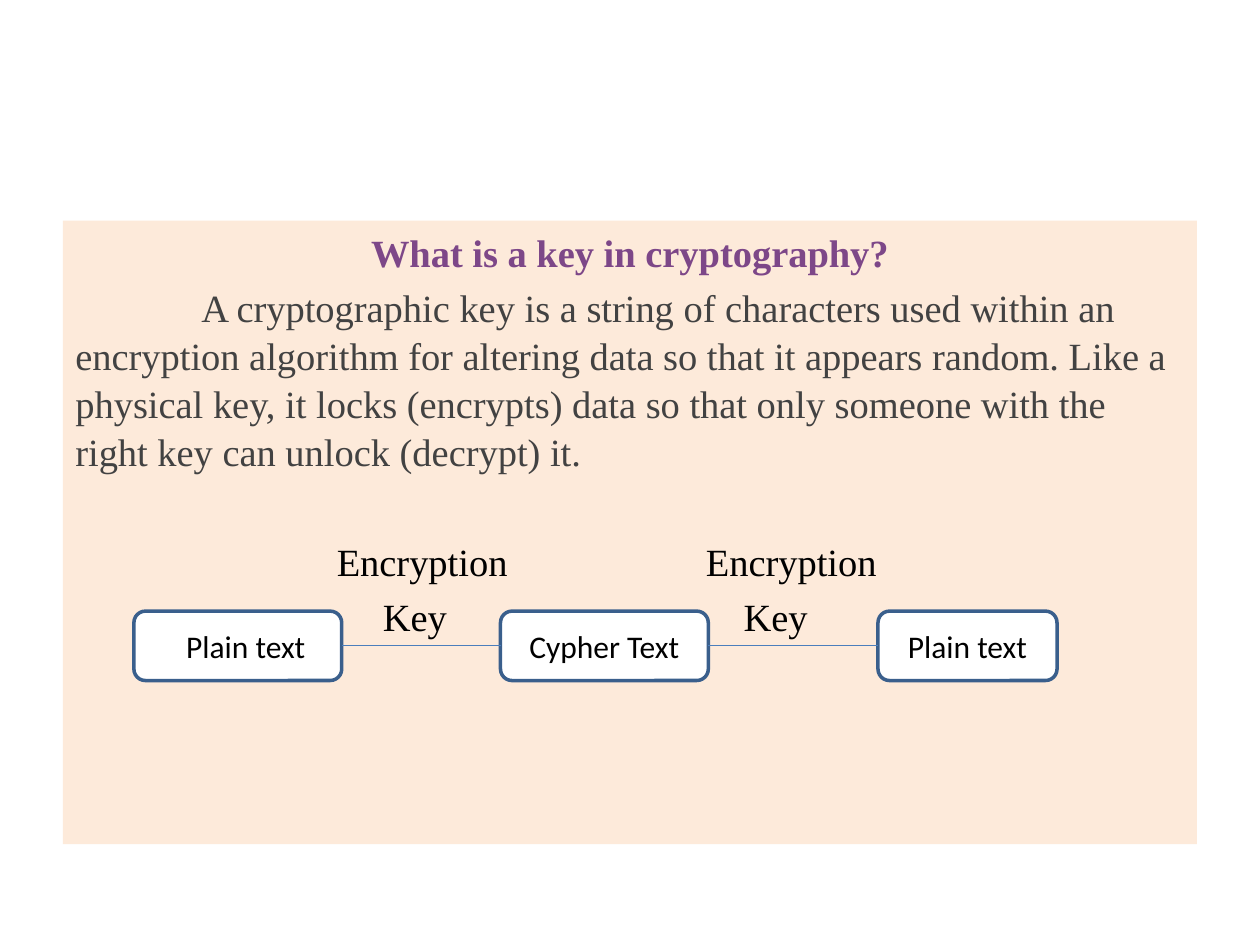
from lxml.etree import SubElement
from pptx import Presentation
from pptx.dml.color import RGBColor
from pptx.enum.shapes import MSO_CONNECTOR, MSO_SHAPE
from pptx.enum.text import MSO_ANCHOR, PP_ALIGN
from pptx.oxml.ns import qn
from pptx.util import Cm, Pt

DEFINITION = (
    "A cryptographic key is a string of characters used within an encryption "
    "algorithm for altering data so that it appears random. Like a physical key, "
    "it locks (encrypts) data so that only someone with the right key can unlock "
    "(decrypt) it."
)
# Text, left, width and extra left inset of each step, in cm
STEPS = [
    ("Plain text", 1.43, 4.19, 0.32),
    ("Cypher Text", 8.82, 4.19, 0),
    ("Plain text", 16.43, 3.61, 0),
]


def rgb(value):
    return RGBColor.from_string(value)


def style_font(font, name, size, color, bold=False):
    font.name, font.size, font.bold = name, Pt(size), bold
    font.color.rgb = rgb(color)


def add_box(slide, kind, left, top, width, height, fill):
    sp = slide.shapes.add_shape(kind, Cm(left), Cm(top), Cm(width), Cm(height))
    sp.shadow.inherit = False
    sp.fill.solid()
    sp.fill.fore_color.rgb = rgb(fill)
    sp.text_frame.word_wrap = True
    return sp


def set_tabs(p, stops):
    """Give the paragraph left tab stops, in cm from the text edge."""
    tabs = SubElement(p._p.get_or_add_pPr(), qn("a:tabLst"))
    for stop in stops:
        SubElement(tabs, qn("a:tab"), pos=str(Cm(stop)), algn="l")


def add_panel(slide, left, top, width, height):
    sp = add_box(slide, MSO_SHAPE.RECTANGLE, left, top, width, height, "FDEADA")
    sp.line.fill.background()
    tf = sp.text_frame
    tf.vertical_anchor = MSO_ANCHOR.TOP
    # Text, colour, bold, space before in points, tab stops
    rows = [
        ("What is a key in cryptography?", "7D4788", True, 0, ()),
        (DEFINITION, "424242", False, 4.4, ()),
        ("\tEncryption\tEncryption", "000000", False, 35, (5.27, 12.71)),
        ("\tKey\tKey", "000000", False, 4.4, (6.2, 13.47)),
    ]
    for i, (text, color, bold, before, stops) in enumerate(rows):
        p = tf.add_paragraph() if i else tf.paragraphs[0]
        p.text = text
        p.alignment = PP_ALIGN.LEFT if i else PP_ALIGN.CENTER
        p.space_before = Pt(before)
        p.line_spacing = 1.04
        if stops:
            set_tabs(p, stops)
        style_font(p.font, "Times New Roman", 22, color, bold)
    tf.paragraphs[1]._p.get_or_add_pPr().set("indent", str(Cm(2.54)))


def add_step(slide, left, top, width, height, text, inset):
    sp = add_box(slide, MSO_SHAPE.ROUNDED_RECTANGLE, left, top, width, height, "FFFFFF")
    sp.line.color.rgb = rgb("3A5F8C")
    sp.line.width = Pt(2)
    tf = sp.text_frame
    tf.margin_left += Cm(inset)
    tf.vertical_anchor = MSO_ANCHOR.MIDDLE
    p = tf.paragraphs[0]
    p.text = text
    p.alignment = PP_ALIGN.CENTER
    style_font(p.font, "Calibri", 18, "000000")
    return sp


def join(slide, start, end):
    line = slide.shapes.add_connector(MSO_CONNECTOR.STRAIGHT, 0, 0, 0, 0)
    line.begin_connect(start, 3)
    line.end_connect(end, 1)
    line.line.color.rgb = rgb("4B7EBC")
    line.line.width = Pt(0.75)
    SubElement(line._element.spPr, qn("a:effectLst"))


def add_flow(slide, left, top, height):
    steps = [
        add_step(slide, left + x, top, width, height, text, inset)
        for text, x, width, inset in STEPS
    ]
    for start, end in zip(steps, steps[1:]):
        join(slide, start, end)


def main():
    prs = Presentation()
    prs.slide_width, prs.slide_height = Cm(25.4), Cm(19.05)
    slide = prs.slides.add_slide(prs.slide_layouts[6])
    left, top = 1.27, 4.45
    add_panel(slide, left, top, 22.86, 12.57)
    add_flow(slide, left, top + 7.87, 1.4)
    prs.save("out.pptx")


if __name__ == "__main__":
    main()
